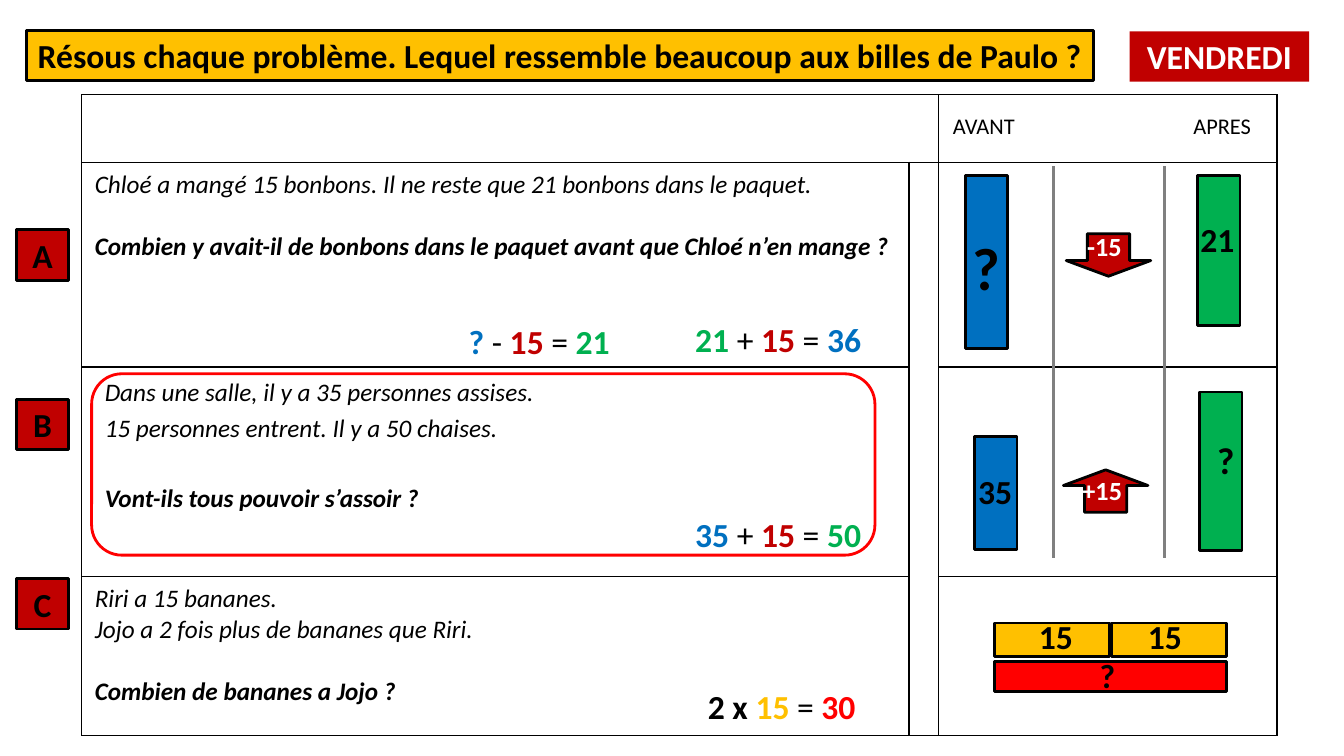
import pptx
import pptx.util
import pptx.dml.color
import pptx.enum.shapes
import pptx.enum.text
from lxml import etree

Cm, Pt = pptx.util.Cm, pptx.util.Pt
RGBColor = pptx.dml.color.RGBColor
MSO_SHAPE = pptx.enum.shapes.MSO_SHAPE
PP_ALIGN = pptx.enum.text.PP_ALIGN

BLACK = RGBColor(0, 0, 0)
WHITE = RGBColor(255, 255, 255)
GRAY = RGBColor(0x80, 0x80, 0x80)
CRIMSON = RGBColor(0xC0, 0, 0)
RED = RGBColor(0xFF, 0, 0)
BLUE = RGBColor(0, 0x70, 0xC0)
GREEN = RGBColor(0, 0xB0, 0x50)
AMBER = RGBColor(0xFF, 0xC0, 0)
FONT = "Calibri"

# Content (lengths in cm)
TITLE = "Résous chaque problème. Lequel ressemble beaucoup aux billes de Paulo ?"
DAY = "VENDREDI"
LABELS = [("A", 5.79), ("B", 10.06), ("C", 14.58)]
COLUMNS = [20.85, 0.74, 8.53]
ROWS = [1.7, 5.16, 5.28, 4.01]
# statement lines, question, side margin, top margin, line spacing, gap in points
PROBLEMS = [
    (["Chloé a mangé 15 bonbons. Il ne reste que 21 bonbons dans le paquet."],
     "Combien y avait-il de bonbons dans le paquet avant que Chloé n’en mange\u00a0?",
     0.33, 0.18, 1, 22),
    (["Dans une salle, il y a 35 personnes assises.",
      "15 personnes entrent. Il y a 50 chaises."],
     "Vont-ils tous pouvoir s’assoir\u00a0?", 0.58, 0.15, 1.15, 25),
    (["Riri a 15 bananes.", "Jojo a 2 fois plus de bananes que Riri."],
     "Combien de bananes a Jojo\u00a0?", 0.33, 0.18, 1, 22),
]
HEADINGS = [("AVANT", 23.6, 2.39), ("APRES", 29.34, 2.92)]
DIVIDERS = [26.54, 29.34]
# left, top, width, height, fill
BARS = [
    (24.33, 4.42, 1.07, 4.37, BLUE), (30.18, 4.42, 1.07, 3.78, GREEN),
    (24.56, 11, 1.07, 2.84, BLUE), (30.23, 9.88, 1.07, 3.99, GREEN),
    (25.07, 15.7, 2.9, 0.84, AMBER), (28.02, 15.7, 2.9, 0.84, AMBER),
    (25.07, 16.66, 5.84, 0.76, RED),
]
ARROWS = [(26.87, 5.89, 180), (26.8, 11.84, 0)]
# text, left, top, width, height, size, colour, centred
VALUES = [
    ("?", 24.05, 5.69, 1.6, 1.8, 42.7, BLACK, True),
    ("-15", 27.15, 5.69, 1.68, 1.07, 18.7, WHITE, False),
    ("21", 30, 5.38, 1.7, 1.27, 24, BLACK, False),
    ("35", 24.28, 11.73, 1.6, 1.27, 24, BLACK, True),
    ("+15", 27.03, 11.84, 1.83, 1.07, 18.7, WHITE, False),
    ("?", 30.23, 10.9, 1.32, 1.4, 26.7, BLACK, True),
    ("15", 25.93, 15.39, 1.68, 1.27, 24, BLACK, False),
    ("15", 28.68, 15.39, 1.68, 1.27, 24, BLACK, False),
    ("?", 27.46, 16.38, 2.08, 1.27, 24, BLACK, False),
]
# left, top, width, terms; black terms are operators
EQUATIONS = [
    (11.33, 7.95, 4.52, [("?", BLUE), (" - ", None), ("15", CRIMSON),
                         (" = ", None), ("21", GREEN)]),
    (17.02, 7.92, 5.18, [("21", GREEN), (" + ", None), ("15", CRIMSON),
                         (" = ", None), ("36", BLUE)]),
    (17.02, 12.83, 5.18, [("35", BLUE), (" + ", None), ("15", CRIMSON),
                          (" = ", None), ("50", GREEN)]),
    (17.2, 17.15, 5, [("2 x ", BLACK), ("15", AMBER), (" = ", None), ("30", RED)]),
]


def style(r, size, color=BLACK, bold=False, italic=False):
    r.font.name, r.font.size = FONT, Pt(size)
    r.font.bold, r.font.italic = bold, italic
    r.font.color.rgb = color


def add_block(s, kind, box, fill=None, line=BLACK):
    sp = s.shapes.add_shape(kind, *map(Cm, box))
    sp.shadow.inherit = False
    if fill is None:
        sp.fill.background()
    else:
        sp.fill.solid()
        sp.fill.fore_color.rgb = fill
    if line is None:
        sp.line.fill.background()
    else:
        sp.line.color.rgb = line
        sp.line.width = Pt(2)
    return sp


def write(sp, terms, size, centred=True, wrap=True):
    """Fill a shape with one line of (text, colour, bold) terms."""
    tf = sp.text_frame
    tf.word_wrap = wrap
    p = tf.paragraphs[0]
    p.alignment = PP_ALIGN.CENTER if centred else PP_ALIGN.LEFT
    for text, color, bold in terms:
        r = p.add_run()
        r.text = text
        style(r, size, color, bold)


def add_text(s, box, terms, size, centred=True):
    write(s.shapes.add_textbox(*map(Cm, box)), terms, size, centred)


def add_borders(cell):
    tcPr = cell._tc.get_or_add_tcPr()
    ns = tcPr.nsmap["a"]
    for i, side in enumerate(("lnL", "lnR", "lnT", "lnB")):
        ln = etree.Element(f"{{{ns}}}{side}", w=str(Pt(1)))
        fill = etree.SubElement(ln, f"{{{ns}}}solidFill")
        etree.SubElement(fill, f"{{{ns}}}srgbClr", val=str(BLACK))
        tcPr.insert(i, ln)


def add_problem(cell, lines, question, side, top, spacing, gap):
    cell.margin_left, cell.margin_right = Cm(side), Cm(0.15)
    cell.margin_top = cell.margin_bottom = Cm(top)
    tf = cell.text_frame
    tf.text = "\n".join(lines + [question])
    for p in tf.paragraphs:
        p.line_spacing = spacing
        style(p.runs[0], 18, italic=True)
    p.space_before = Pt(gap)
    p.runs[0].font.bold = True


def add_problem_table(s):
    tbl = s.shapes.add_table(len(ROWS), len(COLUMNS), Cm(2.06), Cm(2.39),
                             Cm(sum(COLUMNS)), Cm(sum(ROWS))).table
    for col, width in zip(tbl.columns, COLUMNS):
        col.width = Cm(width)
    for row, height in zip(tbl.rows, ROWS):
        row.height = Cm(height)
    for cell in tbl.iter_cells():
        cell.fill.solid()
        cell.fill.fore_color.rgb = WHITE
        add_borders(cell)
    tbl.cell(0, 0).merge(tbl.cell(0, 1))
    tbl.cell(1, 1).merge(tbl.cell(3, 1))
    for i, problem in enumerate(PROBLEMS, 1):
        add_problem(tbl.cell(i, 0), *problem)


def main():
    prs = pptx.Presentation()
    prs.slide_width, prs.slide_height = Cm(33.87), Cm(19.05)
    s = prs.slides.add_slide(prs.slide_layouts[6])

    # Problem letters and table
    for letter, y in LABELS:
        sp = add_block(s, MSO_SHAPE.RECTANGLE, (0.41, y, 1.32, 1.27), CRIMSON)
        write(sp, [(letter, BLACK, True)], 24)
    add_problem_table(s)

    # Before and after columns
    for x in DIVIDERS:
        c = s.shapes.add_connector(pptx.enum.shapes.MSO_CONNECTOR.STRAIGHT,
                                   Cm(x), Cm(4.19), Cm(x), Cm(14.05))
        c.line.color.rgb = GRAY
        c.line.width = Pt(2)
        spPr = c._element.spPr
        etree.SubElement(spPr, f"{{{spPr.nsmap['a']}}}effectLst")
    for text, x, w in HEADINGS:
        add_text(s, (x, 2.69, w, 0.94), [(text, BLACK, False)], 16)

    # Bars, arrows and their values
    for *box, fill in BARS:
        add_block(s, MSO_SHAPE.RECTANGLE, box, fill)
    for x, y, turn in ARROWS:
        sp = add_block(s, MSO_SHAPE.UP_ARROW, (x, y, 2.13, 1.07), CRIMSON)
        sp.adjustments[0], sp.adjustments[1] = 0.5, 0.37
        sp.rotation = turn
    for text, *box, size, color, centred in VALUES:
        add_text(s, box, [(text, color, True)], size, centred)

    # Equations and the frame around the matching problem
    for x, y, w, terms in EQUATIONS:
        add_text(s, (x, y, w, 1.27),
                 [(t, c or BLACK, c is not None) for t, c in terms], 24)
    add_block(s, MSO_SHAPE.ROUNDED_RECTANGLE, (2.31, 9.42, 19.74, 4.57), line=RED)

    # Title and day
    sp = add_block(s, MSO_SHAPE.RECTANGLE, (0.66, 0.76, 26.9, 1.27), AMBER)
    write(sp, [(TITLE, BLACK, True)], 24, wrap=False)
    sp = add_block(s, MSO_SHAPE.RECTANGLE, (28.47, 0.79, 4.52, 1.27), CRIMSON, None)
    write(sp, [(DAY, WHITE, True)], 24)

    prs.save("out.pptx")


if __name__ == "__main__":
    main()
